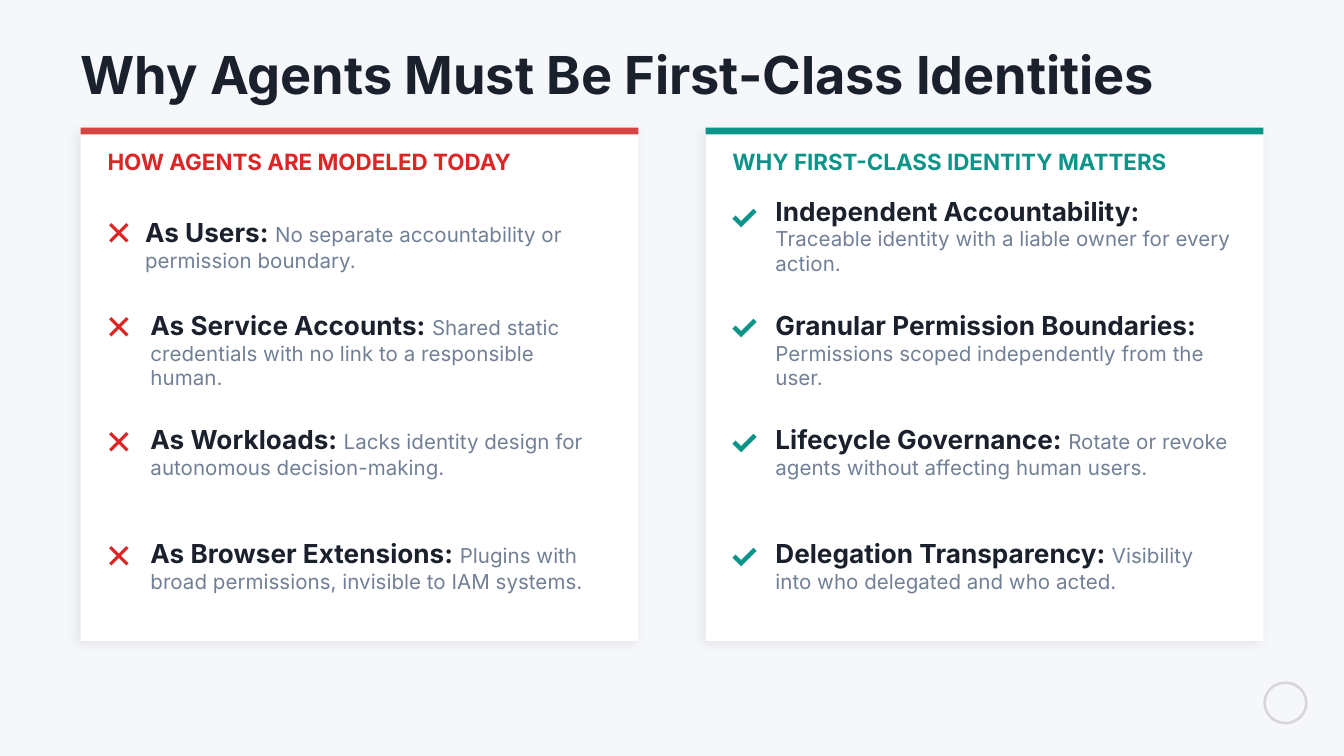
from lxml import etree
from pptx import Presentation
from pptx.dml.color import RGBColor
from pptx.enum.shapes import MSO_SHAPE
from pptx.enum.text import MSO_ANCHOR, MSO_AUTO_SIZE, PP_ALIGN
from pptx.oxml.ns import qn
from pptx.util import Inches, Pt

RECTANGLE, DONUT = MSO_SHAPE.RECTANGLE, MSO_SHAPE.DONUT
TOP, MIDDLE = MSO_ANCHOR.TOP, MSO_ANCHOR.MIDDLE
NO_AUTOFIT, LEFT = MSO_AUTO_SIZE.NONE, PP_ALIGN.LEFT

FONT = "Inter"
BACKGROUND = RGBColor(0xF5, 0xF7, 0xFA)
WHITE = RGBColor(0xFF, 0xFF, 0xFF)
INK = RGBColor(0x1A, 0x20, 0x2C)
GRAY = RGBColor(0x71, 0x80, 0x96)
RED = RGBColor(0xDC, 0x26, 0x26)
RED_BAR = RGBColor(0xD6, 0x45, 0x45)
TEAL = RGBColor(0x0D, 0x94, 0x88)
BADGE = RGBColor(0xD7, 0xD7, 0xD7)

PAGE_WIDTH = 10
PAGE_HEIGHT = PAGE_WIDTH * 9 / 16
CARD_TOP, CARD_WIDTH, CARD_HEIGHT = 0.96, 4.15, 3.81
FIRST_ROW, ROW_PITCH = 0.49, 0.85  # first row is measured from the card top

TODAY = [
    ("As Users: ", "No separate accountability or permission boundary."),
    ("As Service Accounts: ",
     "Shared static credentials with no link to a responsible human."),
    ("As Workloads: ", "Lacks identity design for autonomous decision-making."),
    ("As Browser Extensions: ",
     "Plugins with broad permissions, invisible to IAM systems."),
]
MATTERS = [
    ("Independent Accountability: ",
     "Traceable identity with a liable owner for every action."),
    ("Granular Permission Boundaries: ",
     "Permissions scoped independently from the user."),
    ("Lifecycle Governance: ",
     "Rotate or revoke agents without affecting human users."),
    ("Delegation Transparency: ", "Visibility into who delegated and who acted."),
]


def style_font(font, size, color, bold):
    font.name, font.size, font.bold = FONT, Pt(size), bold
    font.color.rgb = color


def prepare_frame(frame, anchor):
    frame.margin_left = frame.margin_right = 0
    frame.margin_top = frame.margin_bottom = 0
    frame.auto_size = NO_AUTOFIT
    frame.word_wrap = True
    frame.vertical_anchor = anchor
    return frame.paragraphs[0]


def add_text(page, left, top, width, height, anchor=TOP):
    box = page.shapes.add_textbox(
        Inches(left), Inches(top), Inches(width), Inches(height))
    return prepare_frame(box.text_frame, anchor)


def add_label(page, text, size, color, *place, anchor=TOP):
    para = add_text(page, *place, anchor=anchor)
    para.text = text
    style_font(para.font, size, color, True)


def add_block(page, kind, color, left, top, width, height):
    block = page.shapes.add_shape(
        kind, Inches(left), Inches(top), Inches(width), Inches(height))
    block.shadow.inherit = False
    block.fill.solid()
    block.fill.fore_color.rgb = color
    block.line.fill.background()
    return block


def add_soft_shadow(block):
    effects = block._element.spPr.find(qn("a:effectLst"))
    shadow = etree.SubElement(
        effects, qn("a:outerShdw"), blurRad=str(Pt(6)), dist=str(Pt(2)),
        dir=str(135 * 60000), algn="bl", rotWithShape="0")
    color = etree.SubElement(shadow, qn("a:srgbClr"), val="000000")
    etree.SubElement(color, qn("a:alpha"), val="8000")


def add_title(page, text):
    title = page.shapes.title
    title.left, title.top = Inches(0.6), Inches(0.3)
    title.width, title.height = Inches(8.8), Inches(0.5)
    para = prepare_frame(title.text_frame, MIDDLE)
    para.text = text
    para.alignment = LEFT
    style_font(para.font, 28, INK, True)


def add_card(page, left, heading, items, mark, color, bar_color,
             first_mark_drop, first_text_shift=(0, 0)):
    # Panel with its coloured top bar and heading
    add_soft_shadow(add_block(
        page, RECTANGLE, WHITE, left, CARD_TOP, CARD_WIDTH, CARD_HEIGHT))
    add_block(page, RECTANGLE, bar_color, left, CARD_TOP - 0.01, CARD_WIDTH, 0.05)
    add_label(page, heading, 12, color,
              left + 0.2, CARD_TOP + 0.09, CARD_WIDTH - 0.4, 0.3, anchor=MIDDLE)

    # Marked items; the first row has its own offsets
    for index, (name, detail) in enumerate(items):
        row_top = CARD_TOP + FIRST_ROW + index * ROW_PITCH
        mark_drop = -0.02 if index else first_mark_drop
        shift_x, shift_y = (0, 0) if index else first_text_shift
        add_label(page, mark, 18, color, left + 0.18, row_top + mark_drop, 0.3, 0.3)
        para = add_text(page, left + 0.52 + shift_x, row_top + shift_y,
                        3.4, 0.78 - shift_y)
        for text, size, ink, bold in ((name, 14, INK, True),
                                      (detail, 11, GRAY, False)):
            span = para.add_run()
            span.text = text
            style_font(span.font, size, ink, bold)


def add_badge(page, left, top, width, height):
    ring = add_block(page, DONUT, BADGE, left, top, width, height)
    ring.adjustments[0] = 0.06


def main():
    deck = Presentation()
    deck.slide_width, deck.slide_height = Inches(PAGE_WIDTH), Inches(PAGE_HEIGHT)
    page = deck.slides.add_slide(deck.slide_layouts[5])
    page.background.fill.solid()
    page.background.fill.fore_color.rgb = BACKGROUND

    add_badge(page, 9.4, 5.07, 0.33, 0.32)
    add_title(page, "Why Agents Must Be First-Class Identities")
    add_card(page, 0.6, "HOW AGENTS ARE MODELED TODAY", TODAY, "✕", RED, RED_BAR,
             first_mark_drop=0.13, first_text_shift=(-0.04, 0.16))
    add_card(page, 5.25, "WHY FIRST-CLASS IDENTITY MATTERS", MATTERS, "✓", TEAL, TEAL,
             first_mark_drop=0.01)
    deck.save("out.pptx")


if __name__ == "__main__":
    main()
